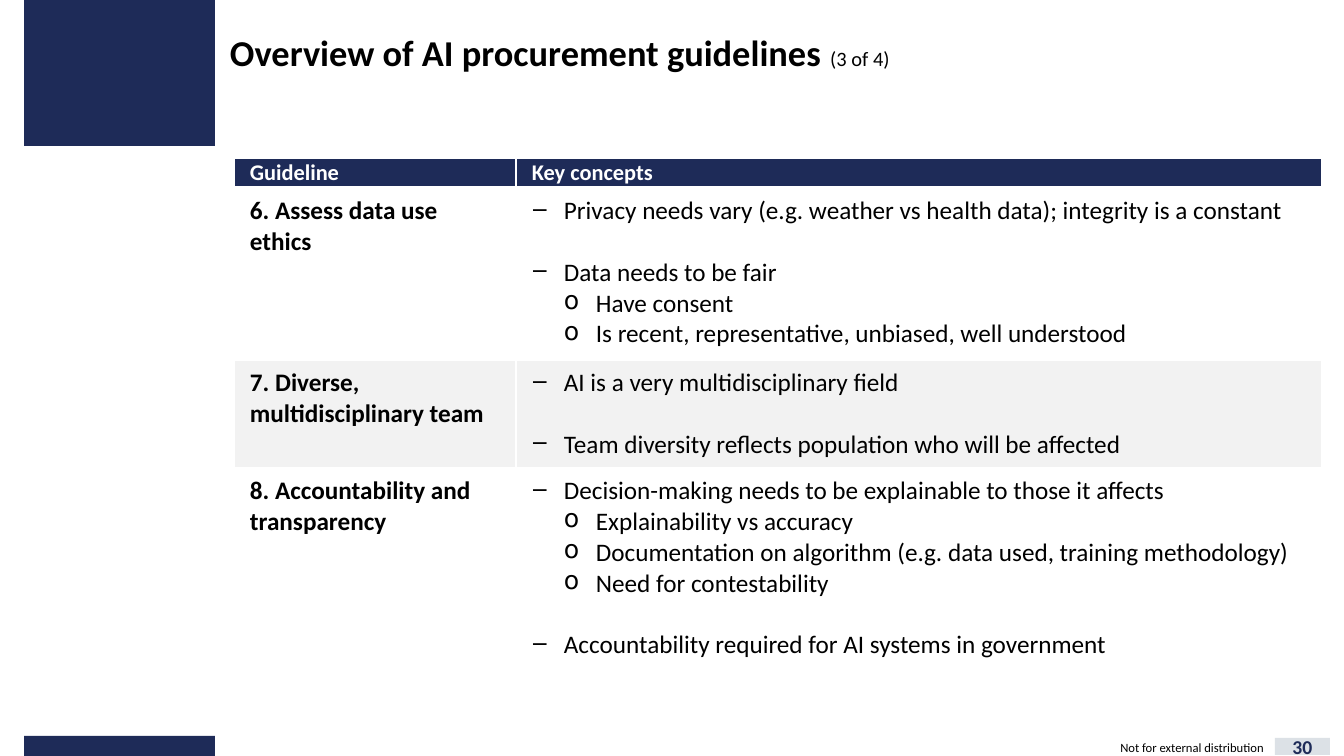
from dataclasses import dataclass

from lxml.etree import SubElement
from pptx import Presentation
from pptx.dml.color import RGBColor
from pptx.enum.shapes import MSO_SHAPE
from pptx.enum.text import MSO_ANCHOR, PP_ALIGN
from pptx.oxml.ns import qn
from pptx.util import Emu, Pt

PX = 9071.43  # EMU per px
FONT = "Calibri"
COLORS = {"navy": "1E2B58", "band": "F2F2F2", "white": "FFFFFF",
          "black": "000000", "badge": "DCE1E6"}
INDENT = 32
LINE_GAP = 22  # points, one line of body text


@dataclass(frozen=True)
class Block:
    left: int
    top: int
    width: int
    height: int
    color: str


@dataclass(frozen=True)
class Concept:
    text: str
    level: int = 0
    gap: int = 0


@dataclass(frozen=True)
class Guideline:
    title: str
    height: int
    color: str
    concepts: tuple[Concept, ...]


NAVY_BLOCKS = (Block(24, 0, 191, 146, "navy"), Block(24, 736, 191, 20, "navy"))
PAGE_BADGE = Block(1275, 738, 55, 17, "badge")
COLUMN_WIDTHS = (282, 806)
HEADINGS = ("Guideline", "Key concepts")
HEADING_HEIGHT = 30
GUIDELINES = (
    Guideline("6. Assess data use ethics", 172, "white", (
        Concept("Privacy needs vary (e.g. weather vs health data); integrity is a constant"),
        Concept("Data needs to be fair", gap=LINE_GAP),
        Concept("Have consent", 1),
        Concept("Is recent, representative, unbiased, well understood", 1),
    )),
    Guideline("7. Diverse, multidisciplinary team", 108, "band", (
        Concept("AI is a very multidisciplinary field"),
        Concept("Team diversity reflects population who will be affected", gap=LINE_GAP),
    )),
    Guideline("8. Accountability and transparency", 201, "white", (
        Concept("Decision-making needs to be explainable to those it affects"),
        Concept("Explainability vs accuracy", 1),
        Concept("Documentation on algorithm (e.g. data used, training methodology)", 1),
        Concept("Need for contestability", 1),
        Concept("Accountability required for AI systems in government", gap=LINE_GAP),
    )),
)


def px(length: int) -> Emu:
    return Emu(round(length * PX))


def rgb(color: str) -> RGBColor:
    return RGBColor.from_string(COLORS[color])


def write(paragraph, text: str, *, size: float, color: str = "black",
          bold: bool = False, align=PP_ALIGN.LEFT, gap: int = 0) -> None:
    paragraph.alignment = align
    if gap:
        paragraph.space_before = Pt(gap)
    run = paragraph.add_run()
    run.text = text
    run.font.name = FONT
    run.font.size = Pt(size)
    run.font.bold = bold
    run.font.color.rgb = rgb(color)


def add_bullet(paragraph, level: int) -> None:
    properties = paragraph._p.get_or_add_pPr()
    properties.set("marL", str(px(INDENT * (level + 1))))
    properties.set("indent", str(-px(INDENT)))
    SubElement(properties, qn("a:buChar")).set("char", "‒o"[level])


def set_frame(frame, anchor=MSO_ANCHOR.TOP) -> None:
    frame.word_wrap = True
    frame.vertical_anchor = anchor
    frame.margin_left = frame.margin_right = 0
    frame.margin_top = frame.margin_bottom = 0


def draw_block(slide, block: Block):
    shape = slide.shapes.add_shape(MSO_SHAPE.RECTANGLE, px(block.left), px(block.top),
                                   px(block.width), px(block.height))
    shape.shadow.inherit = False
    shape.fill.solid()
    shape.fill.fore_color.rgb = rgb(block.color)
    shape.line.fill.background()
    return shape


def draw_text_box(slide, left: int, top: int, width: int, height: int, anchor):
    box = slide.shapes.add_textbox(px(left), px(top), px(width), px(height))
    set_frame(box.text_frame, anchor)
    return box.text_frame.paragraphs[0]


def format_cell(cell, color: str, padding: int, anchor, top: int = 1, bottom: int = 1) -> None:
    cell.margin_left = cell.margin_right = px(16)
    cell.margin_top = cell.margin_bottom = px(padding)
    cell.vertical_anchor = anchor
    properties = cell._tc.get_or_add_tcPr()
    for side, points in (("L", 1), ("R", 1), ("T", top), ("B", bottom)):
        border = SubElement(properties, qn(f"a:ln{side}"), w=str(Pt(points)))
        fill = SubElement(border, qn("a:solidFill"))
        SubElement(fill, qn("a:srgbClr"), val=COLORS["white"])
    cell.fill.solid()
    cell.fill.fore_color.rgb = rgb(color)


def draw_table(slide) -> None:
    heights = (HEADING_HEIGHT, *(guideline.height for guideline in GUIDELINES))
    table = slide.shapes.add_table(len(heights), len(COLUMN_WIDTHS), px(234), px(158),
                                   px(sum(COLUMN_WIDTHS)), px(sum(heights))).table
    for column, width in zip(table.columns, COLUMN_WIDTHS):
        column.width = px(width)
    for row, height in zip(table.rows, heights):
        row.height = px(height)

    for index, heading in enumerate(HEADINGS):
        cell = table.cell(0, index)
        format_cell(cell, "navy", 0, MSO_ANCHOR.MIDDLE, bottom=3)
        write(cell.text_frame.paragraphs[0], heading, size=16, color="white", bold=True)

    for index, guideline in enumerate(GUIDELINES, start=1):
        title_cell, concept_cell = table.cell(index, 0), table.cell(index, 1)
        for cell in (title_cell, concept_cell):
            format_cell(cell, guideline.color, 8, MSO_ANCHOR.TOP, top=3 if index == 1 else 1)
        write(title_cell.text_frame.paragraphs[0], guideline.title, size=18, bold=True)
        frame = concept_cell.text_frame
        for position, concept in enumerate(guideline.concepts):
            paragraph = frame.add_paragraph() if position else frame.paragraphs[0]
            add_bullet(paragraph, concept.level)
            write(paragraph, concept.text, size=18, gap=concept.gap)


def main() -> None:
    deck = Presentation()
    deck.slide_width, deck.slide_height = px(1344), px(756)
    slide = deck.slides.add_slide(deck.slide_layouts[6])

    # Side blocks
    for block in NAVY_BLOCKS:
        draw_block(slide, block)

    # Title
    title = draw_text_box(slide, 230, 30, 888, 49, MSO_ANCHOR.TOP)
    write(title, "Overview of AI procurement guidelines ", size=26, bold=True)
    write(title, "(3 of 4)", size=14.6)

    # Page number and footer
    badge = draw_block(slide, PAGE_BADGE)
    set_frame(badge.text_frame, MSO_ANCHOR.MIDDLE)
    write(badge.text_frame.paragraphs[0], "30", size=14, color="navy", bold=True,
          align=PP_ALIGN.CENTER)
    footer = draw_text_box(slide, 1107, 740, 170, 14, MSO_ANCHOR.MIDDLE)
    write(footer, "Not for external distribution", size=9, align=PP_ALIGN.CENTER)

    # Guidelines
    draw_table(slide)
    deck.save("out.pptx")


if __name__ == "__main__":
    main()
